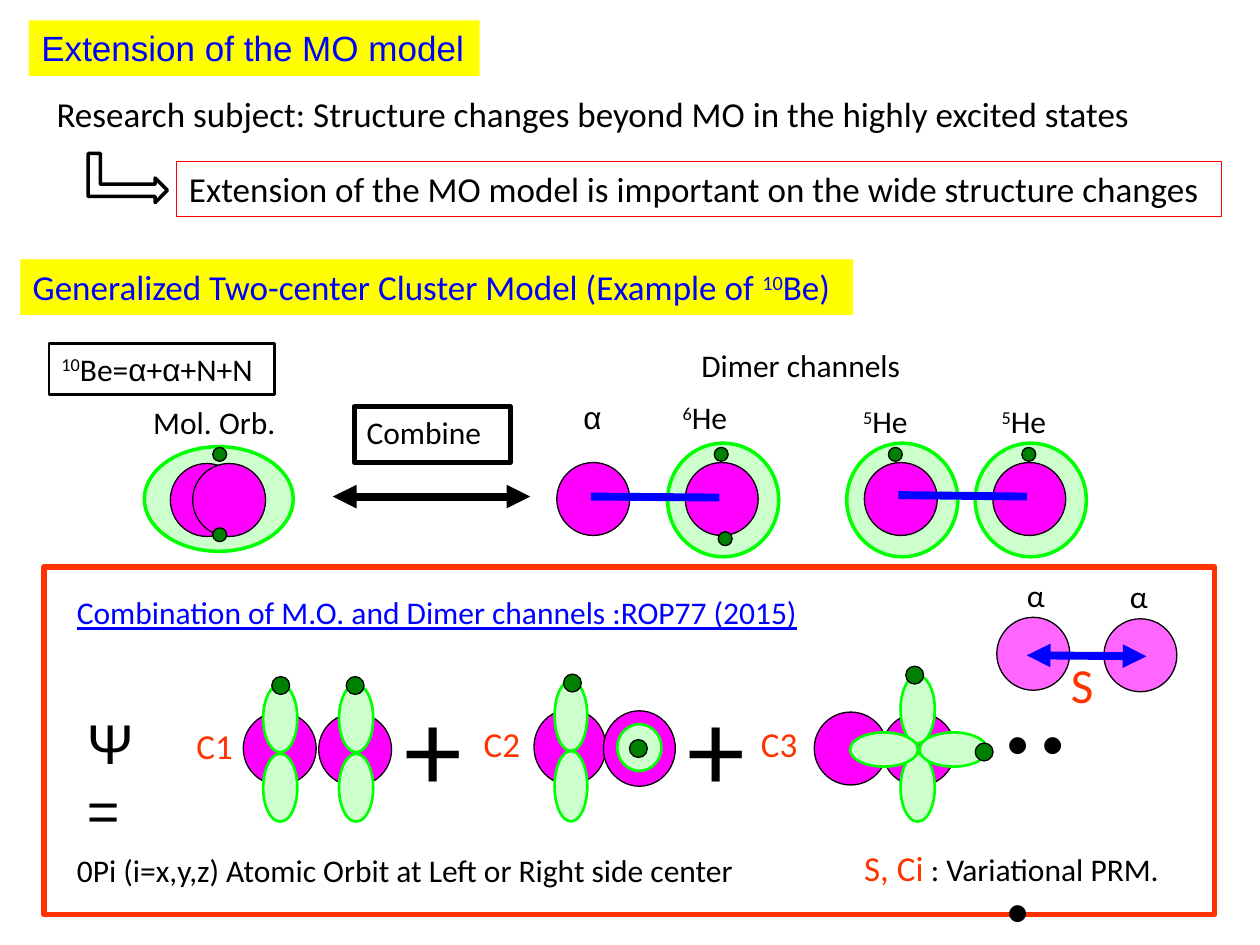
import pptx
import pptx.util
import pptx.dml.color
import pptx.enum.shapes
import pptx.enum.text
import pptx.oxml
import pptx.oxml.ns
import lxml.etree

Cm, Pt = pptx.util.Cm, pptx.util.Pt
SHAPE = pptx.enum.shapes.MSO_SHAPE

THEME = {
    "black": "000000", "blue": "0000FF", "yellow": "FFFF00", "red": "FF0000",
    "orange": "FF3300", "magenta": "FF00FF", "pale": "CCFFCC", "lime": "00FF00",
    "green": "008000",
    "text": {
        "title": (20, "Arial", "blue"),
        "heading": (20, "Calibri", "blue"),
        "lead": (20, "Calibri", "black"),
        "body": (18, "Calibri", "black"),
        "greek": (18, "Arial", "black"),
        "link": (18, "Calibri", "blue"),
        "coefficient": (20, "Calibri", "orange"),
        "distance": (28, "Calibri", "orange"),
        "psi": (32, "Arial", "black"),
        "plus": (66, "Calibri", "black"),
        "dots": (80, "Calibri", "black"),
    },
}

BALLS = {
    "cloud": (2.11, 3.0, "pale", "lime", 2),
    "halo": (2.24, 2.29, "pale", "lime", 2),
    "core": (1.47, 1.47, "magenta", "black", 0.75),
    "tall core": (1.45, 1.52, "magenta", "black", 0.75),
    "lobe": (0.69, 1.37, "pale", "lime", 1.5),
    "long lobe": (0.66, 1.42, "pale", "lime", 1.5),
    "ring": (0.89, 0.94, "pale", "lime", 1.5),
    "neutron": (0.28, 0.28, "green", "black", 0.75),
    "big neutron": (0.36, 0.36, "green", "black", 0.75),
}

MOLECULAR_ORBIT = [
    ("cloud", 4.41, 10.06, 90),
    ("core", 4.17, 10.08), ("core", 4.62, 10.08),
    ("neutron", 4.43, 9.16), ("neutron", 4.43, 10.78),
]
DIMERS = [
    ("halo", 14.58, 10.08), ("core", 14.55, 10.06), ("core", 11.96, 10.06),
    ("neutron", 14.54, 9.16), ("neutron", 14.62, 10.86),
    ("halo", 18.19, 10.08), ("halo", 20.78, 10.08),
    ("core", 18.16, 10.06), ("core", 20.75, 10.06),
    ("neutron", 18.05, 9.16), ("neutron", 20.74, 9.16),
]
TERM_1 = [
    ("core", 5.64, 15.09), ("core", 7.16, 15.11),
    ("lobe", 5.65, 14.48), ("lobe", 5.65, 15.88),
    ("lobe", 7.18, 14.48), ("lobe", 7.18, 15.88),
    ("big neutron", 5.66, 13.82), ("big neutron", 7.16, 13.82),
]
TERM_2 = [
    ("tall core", 11.49, 15.06), ("tall core", 12.89, 15.09),
    ("long lobe", 11.51, 14.43), ("long lobe", 11.51, 15.85),
    ("ring", 12.89, 15.07),
    ("big neutron", 11.54, 13.77), ("big neutron", 12.87, 15.09),
]
TERM_3 = [
    ("core", 17.15, 15.09), ("core", 18.52, 15.11),
    ("lobe", 18.5, 14.3), ("lobe", 18.5, 15.88),
    ("lobe", 19.22, 15.11, 90), ("lobe", 17.82, 15.11, 90),
    ("big neutron", 18.44, 13.61), ("big neutron", 19.84, 15.16),
]
ALPHA_PAIR = [("core", 20.83, 13.18, 0, 60), ("core", 22.99, 13.21, 0, 60)]

LINES = [
    (6.71, 10.01, 10.69, 10.01, "black", True),
    (20.7, 13.21, 23.11, 13.23, "blue", True),
    (18.11, 9.98, 20.7, 10.01, "blue", False),
    (11.91, 10.01, 14.5, 10.03, "blue", False),
]


def nuclide(mass, symbol, style="body"):
    return [(mass, style, "super"), (symbol, style)]


TITLE = ("Extension of the MO model", (0.58, 0.41, 9.09, 1.12))
BOXES = [
    ((3.56, 3.25, 21.06, 1.12), None, ("red", 0.75),
     [("Extension of the MO model is important on the wide structure changes", "lead")]),
    ((0.41, 5.23, 16.79, 1.12), "yellow", None,
     [("Generalized Two-center Cluster Model (Example of ", "heading")]
     + nuclide("10", "Be)", "heading")),
    ((0.99, 6.93, 4.55, 1.02), None, ("black", 1.5),
     nuclide("10", "Be=") + [("α", "greek"), ("+", "body"), ("α", "greek"), ("+N+N", "body")]),
    ((7.14, 8.2, 3.15, 1.12), None, ("black", 3), [("Combine", "body")]),
    ((0.89, 11.43, 23.6, 7.01), None, ("orange", 3), []),
]
LABELS = [
    ((0.89, 1.75, 22.86, 1.12),
     [("Research subject: Structure changes beyond MO in the highly excited states", "lead")]),
    ((1.3, 11.84, 15.72, 1.02),
     [("Combination of M.O. and Dimer channels :ROP77 (2015)", "link", "underline")]),
    ((1.3, 17.04, 13.92, 1.02),
     [("0Pi (i=x,y,z) Atomic Orbit at Left or Right side center", "body")]),
    ((17.17, 16.94, 7.34, 1.09),
     [("S, Ci", "coefficient"), (" ", "link"), (": Variational PRM.", "body")]),
    ((2.84, 8.0, 3.12, 1.02), [("Mol. Orb.", "body")]),
    ((13.89, 6.86, 4.57, 1.02), [("Dimer channels", "body")]),
    ((11.51, 7.9, 0.91, 1.02), [("α", "greek")]),
    ((13.51, 7.9, 1.55, 1.02), nuclide("6", "He")),
    ((17.15, 7.98, 1.55, 1.02), nuclide("5", "He")),
    ((19.94, 7.98, 1.55, 1.02), nuclide("5", "He")),
    ((20.45, 11.48, 0.89, 1.02), [("α", "body")]),
    ((22.53, 11.51, 0.89, 1.02), [("α", "body")]),
    ((21.34, 13.06, 1.17, 1.45), [("S", "distance")]),
    ((1.5, 14.15, 2.31, 1.6), [("Ψ =", "psi")]),
    ((3.71, 14.48, 1.42, 1.09), [("C1", "coefficient")]),
    ((9.5, 14.45, 1.42, 1.09), [("C2", "coefficient")]),
    ((15.09, 14.45, 1.42, 1.09), [("C3", "coefficient")]),
    ((7.9, 13.51, 2.39, 3.05), [("+", "plus")]),
    ((13.61, 13.51, 2.39, 3.05), [("+", "plus")]),
    ((19.91, 12.24, 2.49, 3.63), [("...", "dots")]),
]


def rgb(name):
    return pptx.dml.color.RGBColor.from_string(THEME[name])


def paint(sp, fill=None, line=None):
    if fill:
        sp.fill.solid()
        sp.fill.fore_color.rgb = rgb(fill)
    else:
        sp.fill.background()
    if line:
        sp.line.color.rgb = rgb(line[0])
        sp.line.width = Pt(line[1])
    else:
        sp.line.fill.background()


def write(sp, runs):
    tf = sp.text_frame
    tf.word_wrap = True
    tf.auto_size = pptx.enum.text.MSO_AUTO_SIZE.NONE
    tf.vertical_anchor = pptx.enum.text.MSO_ANCHOR.TOP
    p = tf.paragraphs[0]
    p.alignment = pptx.enum.text.PP_ALIGN.LEFT
    for text, style, *marks in runs:
        r = p.add_run()
        r.text = text
        size, r.font.name, color = THEME["text"][style]
        r.font.size = Pt(size)
        r.font.color.rgb = rgb(color)
        if "underline" in marks:
            r.font.underline = True
        if "super" in marks:
            r._r.get_or_add_rPr().set("baseline", "30000")


def add_preset(s, preset, box, fill=None, line=None):
    sp = s.shapes.add_shape(preset, *map(Cm, box))
    sp.shadow.inherit = False
    paint(sp, fill, line)
    return sp


def add_ball(s, kind, cx, cy, rotation=0, opacity=100):
    w, h, fill, line, width = BALLS[kind]
    sp = add_preset(s, SHAPE.OVAL, (cx - w / 2, cy - h / 2, w, h), fill, (line, width))
    sp.rotation = rotation
    if opacity < 100:
        clr = sp._element.spPr.find(".//" + pptx.oxml.ns.qn("a:srgbClr"))
        alpha = lxml.etree.SubElement(clr, pptx.oxml.ns.qn("a:alpha"))
        alpha.set("val", str(opacity * 1000))


def add_line(s, x1, y1, x2, y2, color, arrows):
    kind = pptx.enum.shapes.MSO_CONNECTOR.STRAIGHT
    c = s.shapes.add_connector(kind, *map(Cm, (x1, y1, x2, y2)))
    c.line.color.rgb = rgb(color)
    c.line.width = Pt(4.5)
    if arrows:
        for end in ("a:headEnd", "a:tailEnd"):
            ln = c.line._get_or_add_ln()
            lxml.etree.SubElement(ln, pptx.oxml.ns.qn(end)).set("type", "triangle")
    lxml.etree.SubElement(c._element.spPr, pptx.oxml.ns.qn("a:effectLst"))


def main():
    prs = pptx.Presentation()
    prs.slide_width, prs.slide_height = Cm(25.4), Cm(19.05)
    s = prs.slides.add_slide(prs.slide_layouts[5])
    text, box = TITLE
    title = s.shapes.title
    title.left, title.top, title.width, title.height = map(Cm, box)
    paint(title, "yellow")
    write(title, [(text, "title")])
    for box, fill, line, runs in BOXES:
        write(add_preset(s, SHAPE.RECTANGLE, box, fill, line), runs)
    arrow = add_preset(s, SHAPE.BENT_UP_ARROW, (2.08, 2.79, 0.99, 1.6), None, ("black", 2))
    arrow.rotation = 90
    for ball in MOLECULAR_ORBIT + DIMERS + TERM_1 + TERM_2 + TERM_3 + ALPHA_PAIR:
        add_ball(s, *ball)
    for line in LINES:
        add_line(s, *line)
    for box, runs in LABELS:
        write(s.shapes.add_textbox(*map(Cm, box)), runs)
    prs.save("out.pptx")


if __name__ == "__main__":
    main()
